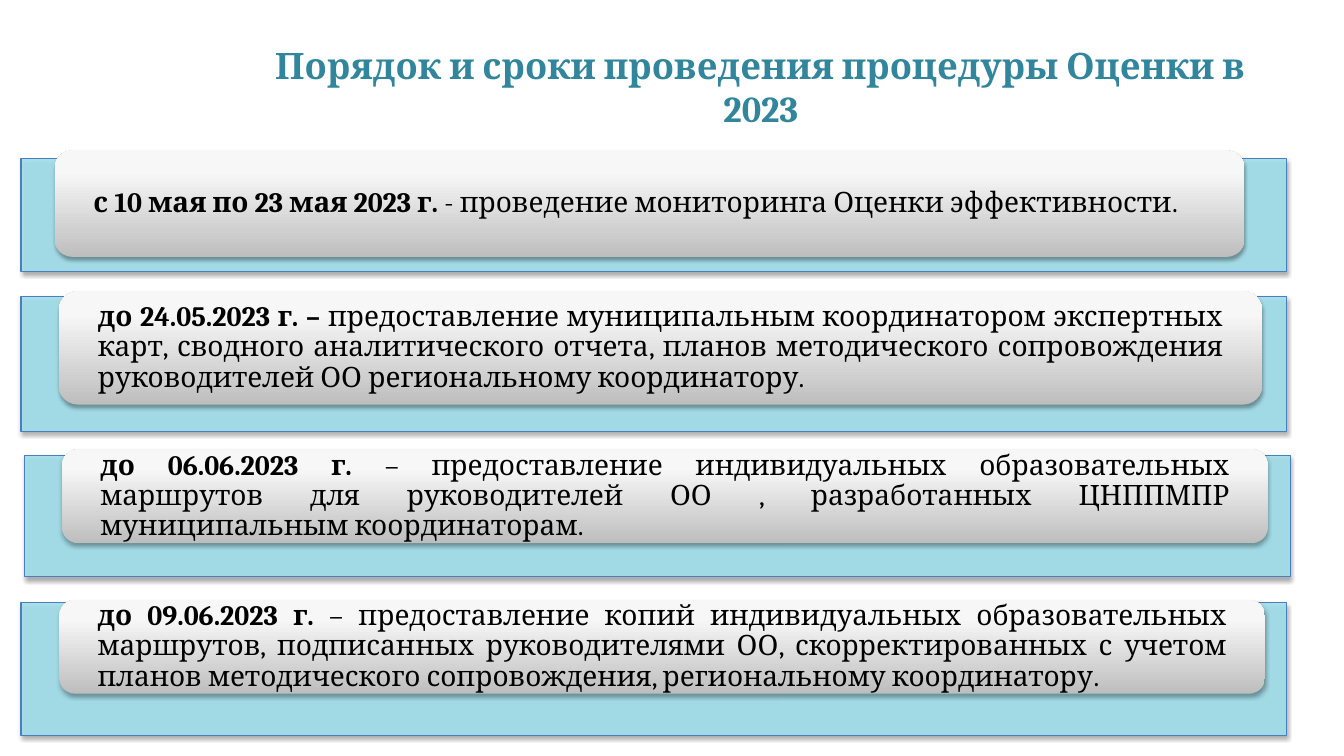
import copy

import lxml.etree
import pptx
import pptx.dml.color
import pptx.enum.shapes
import pptx.enum.text
import pptx.oxml.ns
import pptx.util

Pt = pptx.util.Pt
qn = pptx.oxml.ns.qn
SHAPES = pptx.enum.shapes.MSO_SHAPE
ALIGN = pptx.enum.text.PP_ALIGN


def rgb(value):
    return pptx.dml.color.RGBColor.from_string(value)


def add_text(paragraph, text, size=20, color="000000", bold=False):
    run = paragraph.add_run()
    run.text = text
    run.font.name = "Cambria"
    run.font.size = Pt(size)
    run.font.bold = bold
    run.font.color.rgb = rgb(color)


presentation = pptx.Presentation()
presentation.slide_width = Pt(960)
presentation.slide_height = Pt(540)
slide = presentation.slides.add_slide(presentation.slide_layouts[6])

stages = [
    ((15, 113, 904, 81), (39, 107.5, 850, 76), ALIGN.LEFT,
     "с 10 мая по 23 мая 2023 г. ",
     "- проведение мониторинга Оценки эффективности."),
    ((15, 212, 904, 96), (42, 208, 859.5, 81), ALIGN.JUSTIFY,
     "до 24.05.2023 г. – ",
     "предоставление муниципальным координатором экспертных карт, сводного "
     "аналитического отчета, планов методического сопровождения "
     "руководителей ОО региональному координатору."),
    ((17.5, 325.5, 904, 86.5), (44.5, 321, 861, 67), ALIGN.JUSTIFY,
     "до 06.06.2023 г. ",
     "– предоставление индивидуальных образовательных маршрутов для "
     "руководителей ОО , разработанных ЦНППМПР муниципальным координаторам."),
    ((15, 430.5, 904, 95), (42.5, 428.5, 861, 67), ALIGN.JUSTIFY,
     "до 09.06.2023 г. ",
     "– предоставление копий индивидуальных образовательных маршрутов, "
     "подписанных руководителями ОО, скорректированных с учетом планов "
     "методического сопровождения, региональному координатору."),
]
gradient = [(0, "BEBEBE"), (0.8, "F7F7F7"), (1, "F8F8F8")]

for band_box, card_box, alignment, deadline, task in stages:
    band = slide.shapes.add_shape(SHAPES.RECTANGLE, *map(Pt, band_box))
    band.fill.solid()
    band.fill.fore_color.rgb = rgb("A0DEEA")
    fill_color = band.element.spPr.find(".//" + qn("a:srgbClr"))
    lxml.etree.SubElement(fill_color, qn("a:alpha"), val="90000")
    band.line.color.rgb = rgb("4B7EBC")
    band.line.width = Pt(0.75)

    card = slide.shapes.add_shape(SHAPES.ROUNDED_RECTANGLE, *map(Pt, card_box))
    card.fill.gradient()
    card.fill.gradient_angle = 90
    stop_list = card.element.spPr.find(".//" + qn("a:gsLst"))
    stop_list.append(copy.deepcopy(stop_list[-1]))
    for stop, (position, color) in zip(card.fill.gradient_stops, gradient):
        stop.position = position
        stop.color.rgb = rgb(color)
    card.line.fill.background()

    for shape in (band, card):
        shape.shadow.inherit = False
        effects = shape.element.spPr.find(qn("a:effectLst"))
        shadow = lxml.etree.SubElement(
            effects, qn("a:outerShdw"), blurRad=str(Pt(3.1)),
            dist=str(Pt(1.8)), dir="5400000", rotWithShape="0")
        shadow_color = lxml.etree.SubElement(shadow, qn("a:srgbClr"), val="000000")
        lxml.etree.SubElement(shadow_color, qn("a:alpha"), val="35000")

    frame = card.text_frame
    frame.word_wrap = True
    frame.vertical_anchor = pptx.enum.text.MSO_ANCHOR.MIDDLE
    frame.margin_left = frame.margin_right = Pt(24)
    frame.margin_top = frame.margin_bottom = Pt(0)
    paragraph = frame.paragraphs[0]
    paragraph.alignment = alignment
    paragraph.line_spacing = 0.9
    add_text(paragraph, deadline, bold=True)
    add_text(paragraph, task)

title = slide.shapes.add_textbox(Pt(181), Pt(27), Pt(725), Pt(39))
title.text_frame.word_wrap = True
paragraph = title.text_frame.paragraphs[0]
paragraph.alignment = ALIGN.CENTER
add_text(paragraph, "Порядок и сроки проведения процедуры Оценки в 2023",
         size=26, color="31859C", bold=True)

presentation.save("out.pptx")
